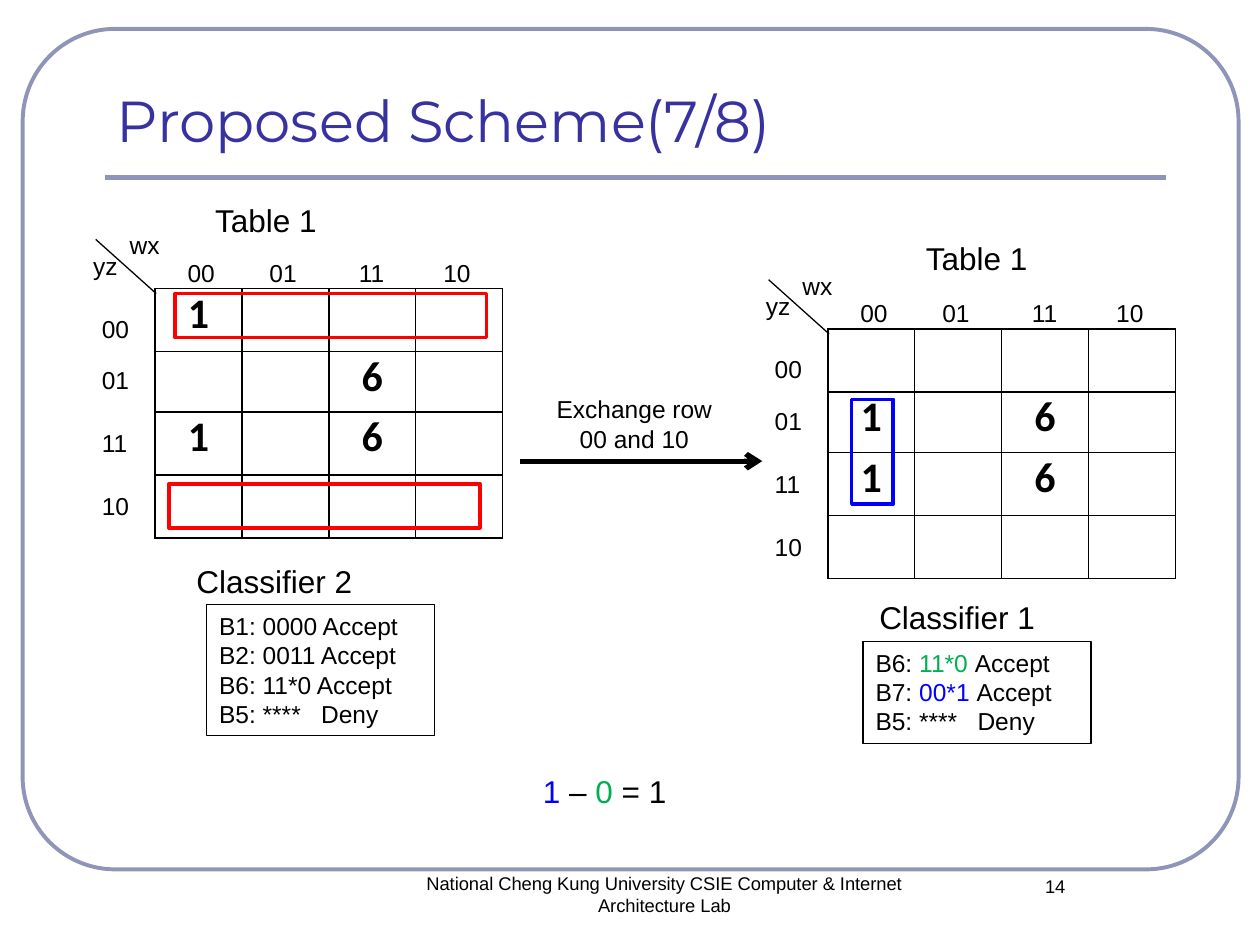
from lxml import etree
from pptx import Presentation
from pptx.dml.color import RGBColor
from pptx.enum import shapes, text
from pptx.oxml import ns
from pptx.util import Inches, Pt

BLACK = RGBColor(0, 0, 0)
WHITE = RGBColor(255, 255, 255)
RED = RGBColor(255, 0, 0)
BLUE = RGBColor(0, 0, 255)
GREEN = RGBColor(0, 0xB0, 0x50)
FRAME = RGBColor(0x90, 0x94, 0xB8)
TITLE = RGBColor(0x37, 0x32, 0xA0)

CODES = ["00", "01", "11", "10"]
COLUMN_OFFSETS = [0.16, 0.81, 1.52, 2.19]
ROW_OFFSETS = [0.15, 0.56, 1.06, 1.56]
ROW_HEIGHTS = [0.5, 0.48, 0.5, 0.5]
COLUMN_WIDTH = 0.69


def add_child(parent, tag, **attributes):
    return etree.SubElement(parent, ns.qn(tag), attributes)


def write(frame, lines, size, font="Arial", color=BLACK, align=text.PP_ALIGN.LEFT):
    for index, line in enumerate(lines):
        para = frame.paragraphs[0] if index == 0 else frame.add_paragraph()
        para.alignment = align
        para.font.size = Pt(size)
        para.font.name = font
        spans = [(line, color)] if isinstance(line, str) else line
        for words, span_color in spans:
            span = para.add_run()
            span.text = words
            span.font.color.rgb = span_color


def add_text(page, box, lines, size=14, wrap=True, **style):
    label = page.shapes.add_textbox(*map(Inches, box))
    label.text_frame.word_wrap = wrap
    write(label.text_frame, lines, size, **style)
    return label


def add_outline(page, box, color, width, kind=shapes.MSO_SHAPE.RECTANGLE):
    outline = page.shapes.add_shape(kind, *map(Inches, box))
    outline.shadow.inherit = False
    outline.fill.background()
    outline.line.color.rgb = color
    outline.line.width = Pt(width)
    return outline


def add_line(page, start, end, color, width):
    line = page.shapes.add_connector(
        shapes.MSO_CONNECTOR.STRAIGHT, *map(Inches, start + end))
    line.line.color.rgb = color
    line.line.width = Pt(width)
    add_child(line._element.spPr, "a:effectLst")
    return line


def add_borders(cell):
    properties = cell._tc.get_or_add_tcPr()
    for index, side in enumerate(["a:lnL", "a:lnR", "a:lnT", "a:lnB"]):
        border = etree.Element(ns.qn(side), {"w": str(Pt(1))})
        add_child(add_child(border, "a:solidFill"), "a:srgbClr", val=str(BLACK))
        properties.insert(index, border)


def add_map(page, left, top, values):
    grid = page.shapes.add_table(
        4, 4, Inches(left), Inches(top),
        Inches(4 * COLUMN_WIDTH), Inches(sum(ROW_HEIGHTS))).table
    for column in grid.columns:
        column.width = Inches(COLUMN_WIDTH)
    for row, height in enumerate(ROW_HEIGHTS):
        grid.rows[row].height = Inches(height)
        for column in range(4):
            cell = grid.cell(row, column)
            cell.fill.solid()
            cell.fill.fore_color.rgb = WHITE
            cell.margin_left = cell.margin_right = Inches(0.07)
            cell.margin_top = cell.margin_bottom = 0
            add_borders(cell)
            if (row, column) in values:
                write(cell.text_frame, [values[row, column]], 24, "Calibri",
                      align=text.PP_ALIGN.CENTER)
                cell.text_frame.paragraphs[0].font.bold = True

    add_line(page, (left + 0.01, top + 0.04), (left - 0.47, top - 0.39), BLACK, 0.75)
    add_text(page, (left - 0.3, top - 0.51, 0.59, 0.34), ["wx"])
    add_text(page, (left - 0.59, top - 0.35, 0.59, 0.34), ["yz"])
    for code, across, down in zip(CODES, COLUMN_OFFSETS, ROW_OFFSETS):
        add_text(page, (left + across, top - 0.29, 0.45, 0.34), [code])
        add_text(page, (left - 0.52, top + down, 0.45, 0.34), [code])


def add_classifier(page, box, rules):
    panel = add_outline(page, box, BLACK, 0.75)
    panel.text_frame.word_wrap = True
    panel.text_frame.vertical_anchor = text.MSO_ANCHOR.TOP
    write(panel.text_frame, rules + ["B5: ****\tDeny"], 14)
    stops = add_child(panel.text_frame.paragraphs[-1]._p.get_or_add_pPr(), "a:tabLst")
    stops.getparent().insert(0, stops)
    add_child(stops, "a:tab", pos=str(Inches(0.81)), algn="l")


def add_background(page):
    frame = add_outline(page, (0.18, 0.23, 9.65, 6.67), FRAME, 2.25,
                        shapes.MSO_SHAPE.ROUNDED_RECTANGLE)
    frame.adjustments[0] = 0.11
    add_line(page, (0.83, 1.41), (9.25, 1.41), FRAME, 3)
    title = add_text(page, (0.83, 0.67, 8.42, 0.79), ["Proposed Scheme(7/8)"], 33,
                     font="Montserrat", color=TITLE)
    title.text_frame.margin_top = 0


def add_footer(page):
    center = text.PP_ALIGN.CENTER
    add_text(page, (3.11, 6.87, 4.33, 0.5),
             ["National Cheng Kung University CSIE Computer & Internet Architecture Lab"],
             10.5, align=center)
    add_text(page, (7.5, 6.9, 1.75, 0.5), ["14"], 10.5, align=center)


def add_before(page):
    add_map(page, 1.23, 2.29, {(0, 0): "1", (1, 2): "6", (2, 0): "1", (2, 2): "6"})
    add_text(page, (1.61, 1.55, 1.02, 0.4), ["Table 1"], 18, wrap=False)
    add_text(page, (1.46, 4.41, 1.45, 0.4), ["Classifier 2"], 18, wrap=False)
    add_classifier(page, (1.64, 4.8, 1.81, 1.04),
                   ["B1: 0000 Accept", "B2: 0011 Accept", "B6: 11*0 Accept"])
    for left, top in [(1.39, 2.33), (1.34, 3.84)]:
        add_outline(page, (left, top, 2.47, 0.35), RED, 2)


def add_after(page):
    add_map(page, 6.57, 2.61, {(1, 0): "1", (1, 2): "6", (2, 0): "1", (2, 2): "6"})
    add_text(page, (7.25, 1.85, 1.02, 0.4), ["Table 1"], 18, wrap=False)
    add_text(page, (6.88, 4.7, 1.45, 0.4), ["Classifier 1"], 18, wrap=False)
    add_classifier(page, (6.85, 5.09, 1.81, 0.81), [
        [("B6: ", BLACK), ("11*0 ", GREEN), ("Accept", BLACK)],
        [("B7: ", BLACK), ("00*1 ", BLUE), ("Accept", BLACK)],
    ])
    add_outline(page, (6.76, 3.17, 0.33, 0.83), BLUE, 2)


def add_exchange(page):
    arrow = add_line(page, (4.13, 3.66), (6.05, 3.66), BLACK, 3)
    add_child(arrow.line._get_or_add_ln(), "a:tailEnd", type="arrow")
    add_text(page, (4.13, 3.08, 1.81, 0.57), ["Exchange row", "00 and 10"],
             align=text.PP_ALIGN.CENTER)
    add_text(page, (4.21, 6.08, 1.19, 0.4),
             [[("1 ", BLUE), ("– ", BLACK), ("0 ", GREEN), ("= 1", BLACK)]],
             18, wrap=False)


def main():
    deck = Presentation()
    deck.slide_width, deck.slide_height = Inches(10), Inches(7.5)
    page = deck.slides.add_slide(deck.slide_layouts[6])
    for add_region in (add_background, add_footer, add_before, add_after, add_exchange):
        add_region(page)
    deck.save("out.pptx")


if __name__ == "__main__":
    main()
